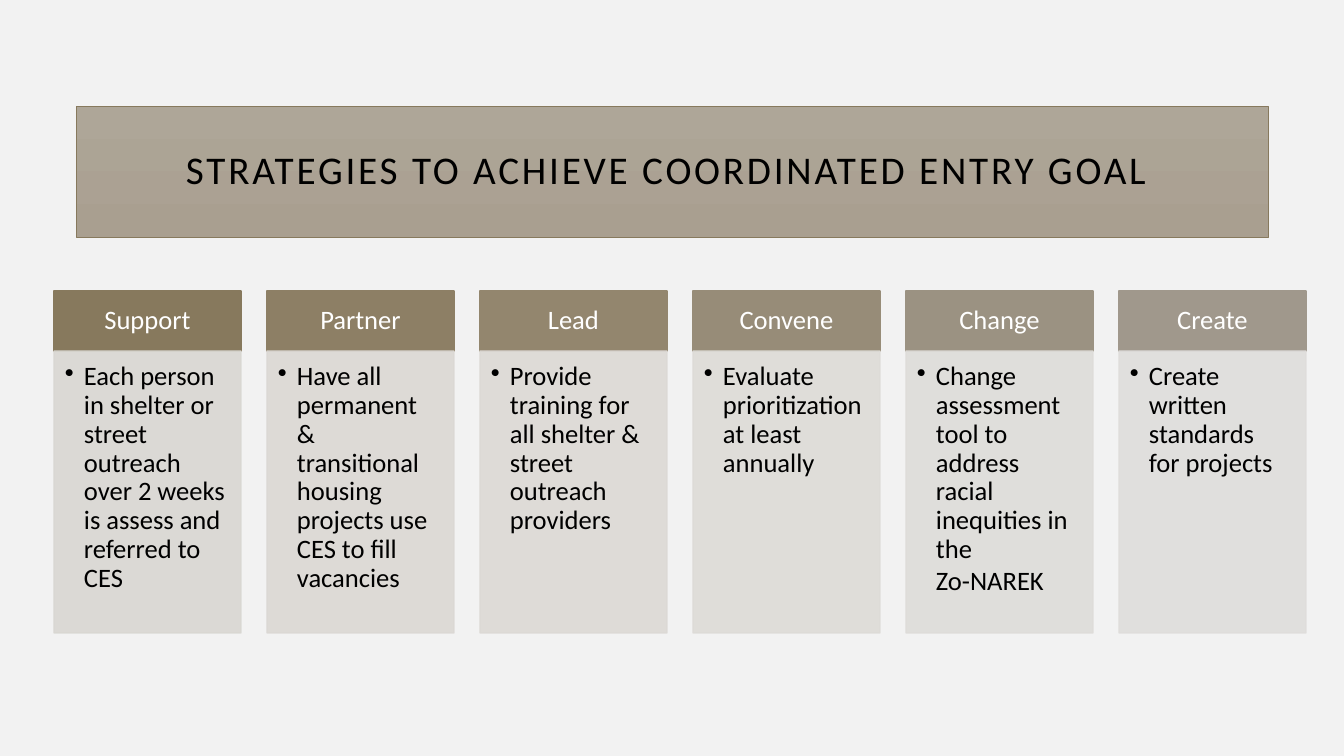
from lxml import etree
from pptx import Presentation
from pptx.dml.color import RGBColor
from pptx.enum.shapes import MSO_SHAPE
from pptx.enum.text import MSO_ANCHOR, MSO_AUTO_SIZE, PP_ALIGN
from pptx.oxml.ns import qn
from pptx.util import Emu, Pt

RECTANGLE = MSO_SHAPE.RECTANGLE
TOP, MIDDLE = MSO_ANCHOR.TOP, MSO_ANCHOR.MIDDLE
LEFT, CENTER = PP_ALIGN.LEFT, PP_ALIGN.CENTER
NO_AUTOFIT = MSO_AUTO_SIZE.NONE
TITLE_ONLY = 5

EMU_PER_PX = 914400 / 100.8
FONT = "Calibri"
COLORS = {
    "background": "F2F2F2",
    "title_top": "AEA698",
    "title_bottom": "A99F90",
    "title_line": "87795D",
    "text": "000000",
    "heading_text": "FFFFFF",
}

COLUMN_LEFT, COLUMN_STEP, COLUMN_WIDTH = 54, 213, 187
HEADING_TOP, HEADING_HEIGHT, BODY_HEIGHT = 291, 60, 282
BULLET_INDENT = 19

# heading, heading color, body color, bulleted text, unbulleted line below it
STRATEGIES = [
    ("Support", "87795D", "D9D7D2",
     "Each person in shelter or street outreach over 2 weeks is assess and referred to CES", None),
    ("Partner", "8D7F65", "DBD8D4",
     "Have all permanent & transitional housing projects use CES to fill vacancies", None),
    ("Lead", "93866E", "DCD9D5",
     "Provide training for all shelter & street outreach providers", None),
    ("Convene", "978C78", "DDDBD7",
     "Evaluate prioritization at least annually", None),
    ("Change", "9B9282", "DEDCD9",
     "Change assessment tool to address racial inequities in the", "Zo-NAREK"),
    ("Create", "A0988C", "DFDDDB",
     "Create written standards for projects", None),
]


def px(length):
    return Emu(round(length * EMU_PER_PX))


def rgb(color):
    return RGBColor.from_string(color)


def set_frame(box, anchor, insets):
    """Set wrapping, anchor and the left, top, right and bottom insets."""
    frame = box.text_frame
    frame.word_wrap = True
    frame.auto_size = NO_AUTOFIT
    frame.vertical_anchor = anchor
    (frame.margin_left, frame.margin_top,
     frame.margin_right, frame.margin_bottom) = map(px, insets)


def write_text(para, text, size=19, color=COLORS["text"], align=LEFT, after=0, tracking=0):
    para.alignment = align
    para.line_spacing = 0.9
    para.space_before = Pt(0)
    para.space_after = Pt(after)
    span = para.add_run()
    span.text = text
    span.font.name = FONT
    span.font.size = Pt(size)
    span.font.color.rgb = rgb(color)
    if tracking:
        span.font._element.set("spc", str(tracking * 100))


def indent(para, bullet=None):
    """Indent a paragraph, hanging its first line when it has a bullet."""
    properties = para._p.get_or_add_pPr()
    properties.set("marL", str(px(BULLET_INDENT)))
    properties.set("indent", str(-px(BULLET_INDENT) if bullet else 0))
    if bullet:
        etree.SubElement(properties, qn("a:buChar")).set("char", bullet)
    else:
        etree.SubElement(properties, qn("a:buNone"))


def add_panel(slide, left, top, height, color, opacity=100):
    panel = slide.shapes.add_shape(
        RECTANGLE, px(left), px(top), px(COLUMN_WIDTH), px(height))
    panel.shadow.inherit = False
    panel.fill.solid()
    panel.fill.fore_color.rgb = rgb(color)
    panel.line.color.rgb = rgb(color)
    panel.line.width = Pt(1)
    if opacity < 100:
        for color_node in panel._element.spPr.iter(qn("a:srgbClr")):
            etree.SubElement(color_node, qn("a:alpha")).set("val", str(opacity * 1000))
    return panel


def add_title(slide, text):
    title = slide.shapes.title
    title.left, title.top, title.width, title.height = map(px, (76, 106, 1192, 131))
    title.fill.gradient()
    title.fill.gradient_angle = 270
    for stop, name in zip(title.fill.gradient_stops, ("title_top", "title_bottom")):
        stop.color.rgb = rgb(COLORS[name])
    title.line.color.rgb = rgb(COLORS["title_line"])
    title.line.width = Pt(0.5)
    set_frame(title, MIDDLE, (20, 20, 31, 20))
    write_text(title.text_frame.paragraphs[0], text, size=28, align=CENTER, tracking=2)


def add_strategy(slide, left, heading, heading_color, body_color, text, extra_line):
    header = add_panel(slide, left, HEADING_TOP, HEADING_HEIGHT, heading_color)
    set_frame(header, MIDDLE, (15, 8, 15, 8))
    write_text(header.text_frame.paragraphs[0], heading,
               color=COLORS["heading_text"], align=CENTER)

    body = add_panel(slide, left, HEADING_TOP + HEADING_HEIGHT, BODY_HEIGHT,
                     body_color, opacity=90)
    set_frame(body, TOP, (11, 12, 16, 17))
    para = body.text_frame.paragraphs[0]
    write_text(para, text, after=2.5)
    indent(para, bullet="•")
    if extra_line:
        para = body.text_frame.add_paragraph()
        write_text(para, extra_line)
        indent(para)


def main():
    deck = Presentation()
    deck.slide_width, deck.slide_height = px(1344), px(756)
    slide = deck.slides.add_slide(deck.slide_layouts[TITLE_ONLY])
    slide.background.fill.solid()
    slide.background.fill.fore_color.rgb = rgb(COLORS["background"])
    add_title(slide, "STRATEGIES TO ACHIEVE COORDINATED ENTRY GOAL")
    for index, strategy in enumerate(STRATEGIES):
        add_strategy(slide, COLUMN_LEFT + index * COLUMN_STEP, *strategy)
    deck.save("out.pptx")


if __name__ == "__main__":
    main()
